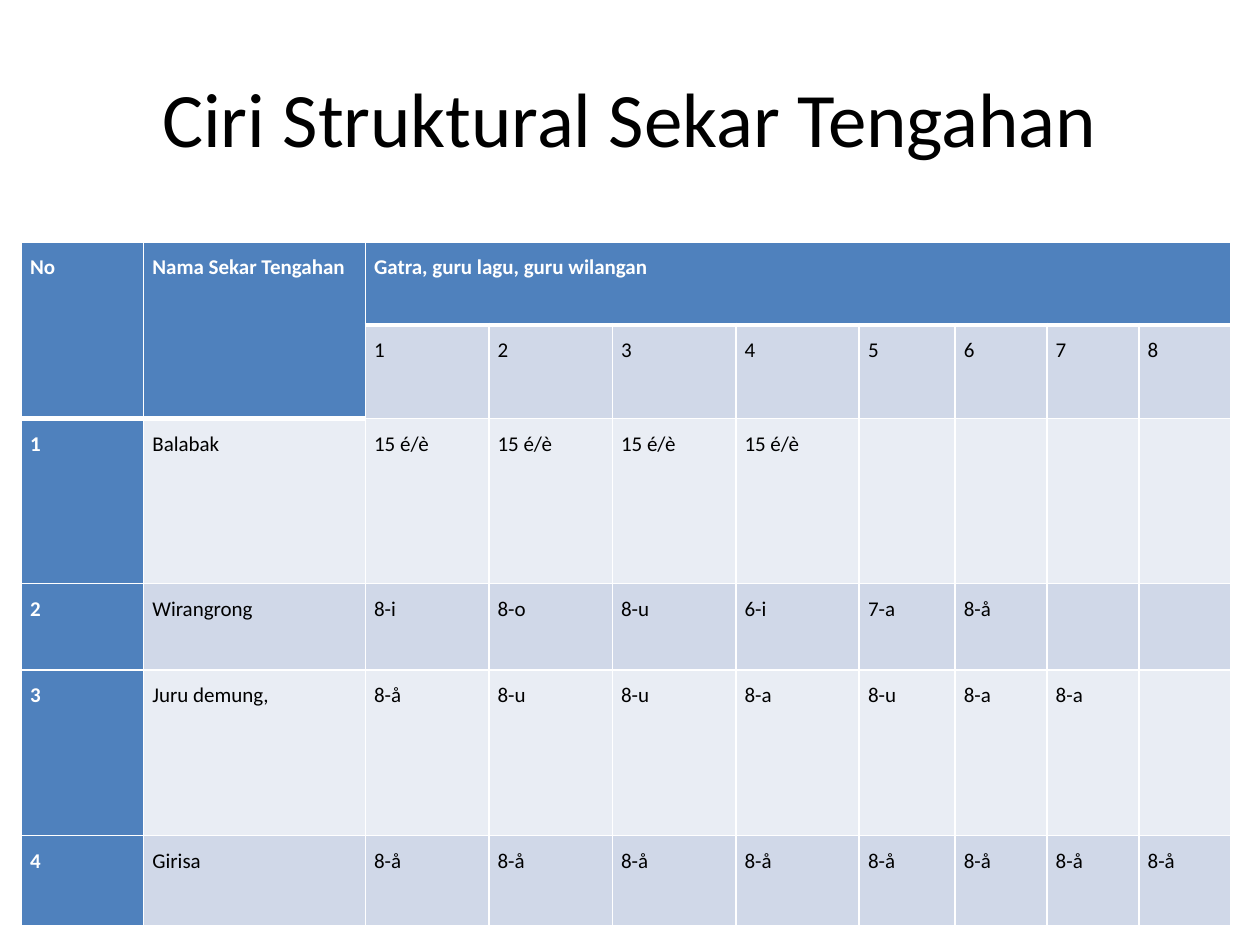
from lxml.etree import SubElement
from pptx import Presentation
from pptx.dml.color import RGBColor
from pptx.enum.text import MSO_ANCHOR, PP_ALIGN
from pptx.oxml.ns import qn
from pptx.util import Inches, Pt

BLUE, BAND_DARK, BAND_LIGHT = "4F81BD", "D0D8E8", "E9EDF4"
WHITE, BLACK = "FFFFFF", "000000"


def add_run(p, text, size, color, bold=False):
    r = p.add_run()
    r.text = text
    r.font.name = "Calibri"
    r.font.size = Pt(size)
    r.font.bold = bold
    r.font.color.rgb = RGBColor.from_string(color)


def add_border(cell, side, width):
    ln = SubElement(cell._tc.get_or_add_tcPr(), qn(f"a:ln{side}"), w=str(Pt(width)))
    fill = SubElement(ln, qn("a:solidFill"))
    SubElement(fill, qn("a:srgbClr"), val=WHITE)


prs = Presentation()
prs.slide_width, prs.slide_height = Inches(10), Inches(7.5)
s = prs.slides.add_slide(prs.slide_layouts[5])

# Title
title = s.shapes.title
title.left, title.top = Inches(0.5), Inches(0.3)
title.width, title.height = Inches(9), Inches(1.25)
tf = title.text_frame
tf.vertical_anchor = MSO_ANCHOR.MIDDLE
p = tf.paragraphs[0]
p.alignment = PP_ALIGN.CENTER
add_run(p, "Ciri Struktural Sekar Tengahan", 44, BLACK)

# Table content: two header rows, then one row per song
rows = [
    ["No", "Nama Sekar Tengahan", "Gatra, guru lagu, guru wilangan"],
    ["", "", "1", "2", "3", "4", "5", "6", "7", "8"],
    ["1", "Balabak"] + ["15 é/è"] * 4,
    ["2", "Wirangrong", "8-i", "8-o", "8-u", "6-i", "7-a", "8-å"],
    ["3", "Juru demung,", "8-å", "8-u", "8-u", "8-a", "8-u", "8-a", "8-a"],
    ["4", "Girisa"] + ["8-å"] * 8,
]
col_widths = [0.97, 1.76] + [0.98] * 4 + [0.76] + [0.73] * 3
row_heights = [0.66, 0.74, 1.31, 0.69, 1.31, 0.72]

# Table grid
table = s.shapes.add_table(len(row_heights), len(col_widths), Inches(0.17), Inches(1.92),
                           Inches(9.58), Inches(5.42)).table
for column, width in zip(table.columns, col_widths):
    column.width = Inches(width)
for row, height in zip(table.rows, row_heights):
    row.height = Inches(height)
table.first_col = True
table.cell(0, 0).merge(table.cell(1, 0))
table.cell(0, 1).merge(table.cell(1, 1))
table.cell(0, 2).merge(table.cell(0, 9))

# Cells: blue header and first column, banded body
for i, texts in enumerate(rows):
    for j in range(len(col_widths)):
        cell = table.cell(i, j)
        header_rows = 2 if j < 2 else 1
        in_header = i < header_rows
        blue = in_header or j == 0
        cell.margin_left = cell.margin_right = Inches(0.07)
        cell.margin_top = cell.margin_bottom = 0

        # A thick line separates the header from the body
        add_border(cell, "L", 1)
        add_border(cell, "R", 1)
        add_border(cell, "T", 3 if i == header_rows else 1)
        add_border(cell, "B", 3 if in_header else 1)
        cell.fill.solid()
        band = BAND_DARK if i % 2 else BAND_LIGHT
        cell.fill.fore_color.rgb = RGBColor.from_string(BLUE if blue else band)

        if j < len(texts) and texts[j]:
            p = cell.text_frame.paragraphs[0]
            p.alignment = PP_ALIGN.LEFT if (i, j) == (0, 1) else PP_ALIGN.JUSTIFY
            p.line_spacing = 1.5
            add_run(p, texts[j], 12, WHITE if blue else BLACK, blue)

prs.save("out.pptx")
